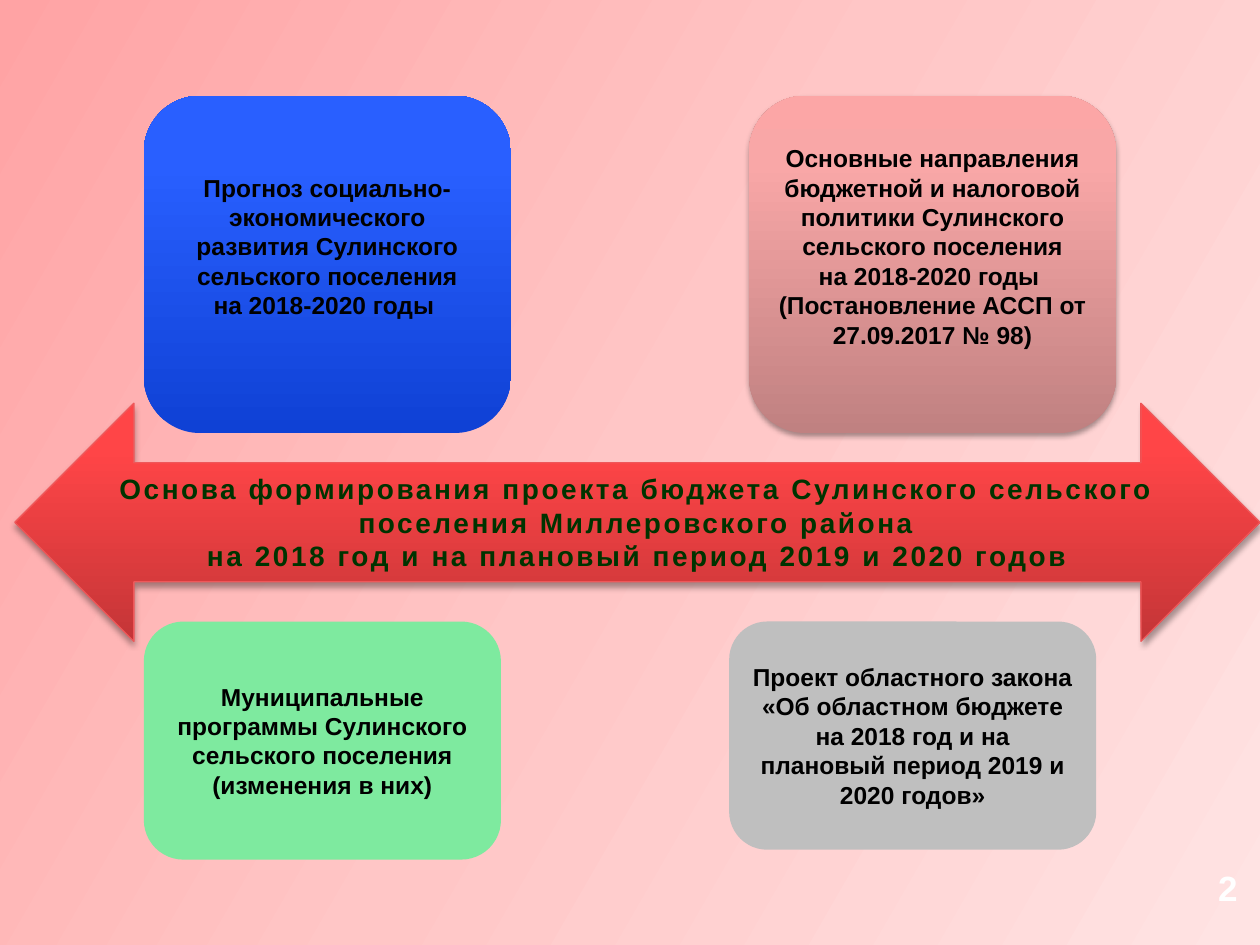
from lxml import etree
from pptx import Presentation
from pptx.dml.color import RGBColor
from pptx.enum import shapes as sh, text as tx
from pptx.oxml import parse_xml
from pptx.oxml.ns import nsdecls, qn
from pptx.util import Cm, Pt

SHADE = (
    f'<a:effectLst {nsdecls("a")}><a:outerShdw blurRad="40000" dist="23000" '
    'dir="5400000" rotWithShape="0"><a:srgbClr val="000000">'
    '<a:alpha val="35000"/></a:srgbClr></a:outerShdw></a:effectLst>'
)


def paint(fill, root, stops, angle):
    """Fill with one hex colour, or with (percent, hex) gradient stops."""
    if isinstance(stops, str):
        fill.solid()
        fill.fore_color.rgb = RGBColor.from_string(stops)
        return
    fill.gradient()
    fill.gradient_angle = angle
    group = next(root.iter(qn("a:gsLst")))
    for old in list(group):
        group.remove(old)
    for spot, tone in stops:
        stop = etree.SubElement(group, qn("a:gs"), pos=str(spot * 1000))
        etree.SubElement(stop, qn("a:srgbClr"), val=tone)


def write(frame, lines, size, tone, align=tx.PP_ALIGN.CENTER):
    frame.word_wrap = True
    frame.vertical_anchor = tx.MSO_ANCHOR.MIDDLE
    for i, line in enumerate(lines):
        para = frame.add_paragraph() if i else frame.paragraphs[0]
        para.text = line
        para.alignment = align
        font = para.font
        font.name, font.size, font.bold = "Arial", Pt(size), True
        font.color.rgb = RGBColor.from_string(tone)


deck = Presentation()
deck.slide_width, deck.slide_height = Cm(25.4), Cm(19.05)
slide = deck.slides.add_slide(deck.slide_layouts[6])
paint(slide.background.fill, slide.element,
      [(0, "FFA3A4"), (50, "FFC6C6"), (100, "FFE3E3")], 330)

BLUE = [(0, "0F41D5"), (80, "295FFF"), (100, "2B60FF")]
PINK = [(0, "C08181"), (80, "F9A7A7"), (100, "FCA6A6")]
RED = [(0, "C43537"), (80, "FF4547"), (100, "FF4649")]
ROUND = sh.MSO_SHAPE.ROUNDED_RECTANGLE
ARROW = sh.MSO_SHAPE.LEFT_RIGHT_ARROW

# kind, box in cm, fill, shadow, bottom inset in cm, text size, colour, lines
parts = [
    (ROUND, (2.9, 1.93, 7.4, 6.8), BLUE, False, 0.86, 14, "000000",
     ["Прогноз социально-экономического развития Сулинского сельского поселения",
      "на 2018-2020 годы "]),
    (ROUND, (15.1, 1.93, 7.4, 6.8), PINK, True, 0.86, 14, "000000",
     ["Основные направления бюджетной и налоговой политики Сулинского "
      "сельского поселения",
      "на 2018-2020 годы ",
      "(Постановление АССП от 27.09.2017 № 98)"]),
    (ROUND, (2.9, 12.53, 7.2, 4.8), "7EEA9F", False, 0.13, 14, "000000",
     ["Муниципальные программы Сулинского сельского поселения",
      "(изменения в них)"]),
    (ROUND, (14.7, 12.53, 7.4, 4.6), "BFBFBF", False, 0.13, 14, "000000",
     ["Проект областного закона «Об областном бюджете на 2018 год и на "
      "плановый период 2019 и 2020 годов»"]),
    (ARROW, (0.3, 8.13, 25.1, 4.8), RED, True, 0.13, 16, "003300",
     ["Основа формирования проекта бюджета Сулинского сельского поселения "
      "Миллеровского района\vна 2018 год и на плановый период 2019 и 2020 годов"]),
]
for kind, box, fill, shade, inset, size, tone, lines in parts:
    shape = slide.shapes.add_shape(kind, *map(Cm, box))
    paint(shape.fill, shape.element, fill, 90)
    shape.line.fill.background()
    shape.shadow.inherit = False
    if shade:
        plain = shape.element.spPr.find(qn("a:effectLst"))
        plain.getparent().replace(plain, parse_xml(SHADE))
    shape.text_frame.margin_bottom = Cm(inset)
    write(shape.text_frame, lines, size, tone)

arrow = shape
arrow.line.color.rgb = RGBColor.from_string("EF5759")
arrow.line.width = Pt(0.75)
for run in arrow.text_frame.paragraphs[0].runs:
    run.font._element.set("spc", "150") if hasattr(run.font, "_element") else \
        run._r.get_or_add_rPr().set("spc", "150")

page = slide.shapes.add_textbox(Cm(23), Cm(17.3), Cm(2.2), Cm(1.2))
write(page.text_frame, ["2"], 20, "FFFFFF", tx.PP_ALIGN.RIGHT)

deck.save("out.pptx")
